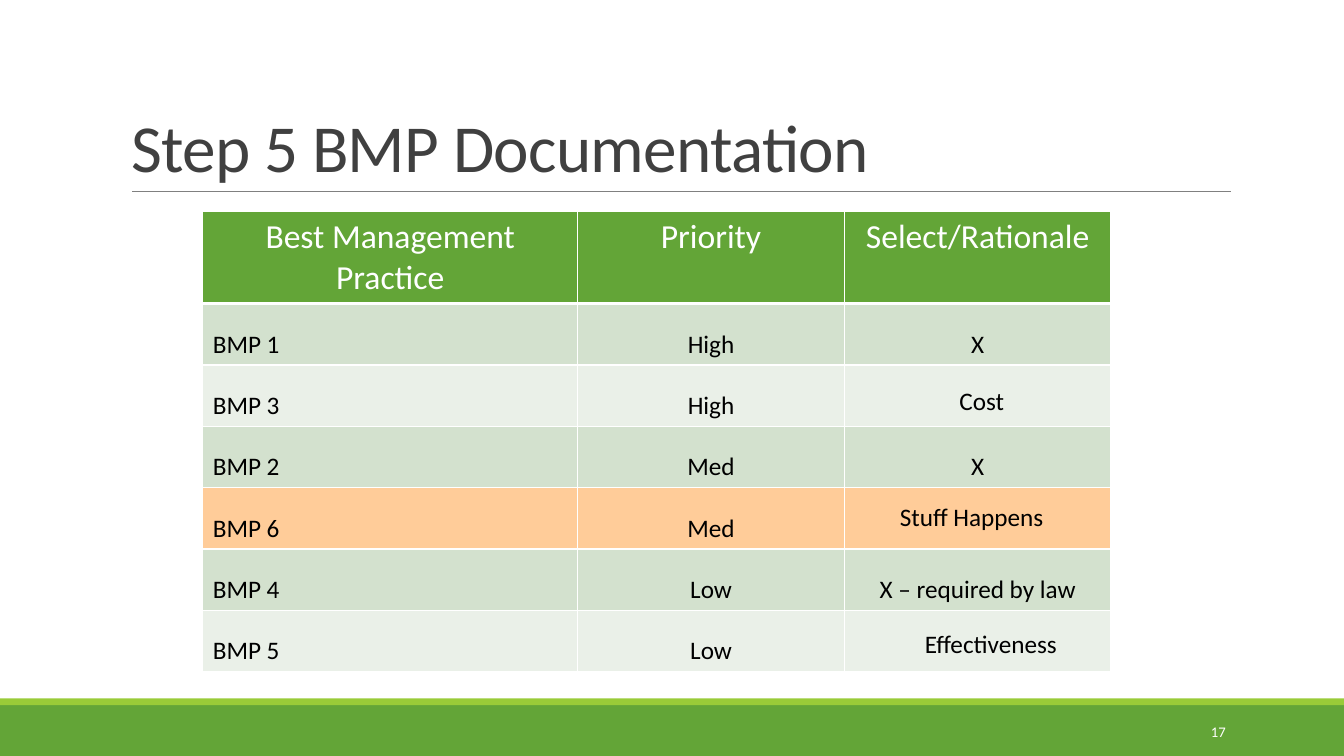
from lxml import etree
from pptx import Presentation
from pptx.dml.color import RGBColor
from pptx.enum.shapes import MSO_CONNECTOR, MSO_SHAPE
from pptx.enum.text import MSO_ANCHOR, MSO_AUTO_SIZE, PP_ALIGN
from pptx.oxml.ns import qn
from pptx.util import Cm, Pt

LEFT, CENTER, RIGHT = PP_ALIGN.LEFT, PP_ALIGN.CENTER, PP_ALIGN.RIGHT
TOP, MIDDLE, BOTTOM = MSO_ANCHOR.TOP, MSO_ANCHOR.MIDDLE, MSO_ANCHOR.BOTTOM
NO_AUTOFIT = MSO_AUTO_SIZE.NONE
RECTANGLE, STRAIGHT = MSO_SHAPE.RECTANGLE, MSO_CONNECTOR.STRAIGHT

WHITE, BLACK, GREEN, LIME = "FFFFFF", "000000", "63A537", "99CB38"
BAND_DARK, BAND_LIGHT, HIGHLIGHT = "D3E1CE", "EAF0E8", "FFCC99"

HEADINGS = ["Best Management Practice", "Priority", "Select/Rationale"]
PRACTICES = [
    ("BMP 1", "High", "X"),
    ("BMP 3", "High", ""),
    ("BMP 2", "Med", "X"),
    ("BMP 6", "Med", ""),
    ("BMP 4", "Low", "X – required by law"),
    ("BMP 5", "Low", ""),
]
HIGHLIGHTED = "BMP 6"
RATIONALES = [
    ("Cost", (23.93, 9.58, 2.34, 1.07)),
    ("Effectiveness", (23.06, 15.7, 4.01, 1.02)),
    ("Stuff Happens", (22.43, 12.52, 4.65, 1.02)),
]


def color(value):
    return RGBColor.from_string(value)


def write(frame, text, size=18, ink=BLACK, align=LEFT, spacing=None):
    paragraph = frame.paragraphs[0]
    paragraph.alignment = align
    if spacing:
        paragraph.line_spacing = spacing
    run = paragraph.add_run()
    run.text = text
    run.font.name = "Calibri"
    run.font.size = Pt(size)
    run.font.color.rgb = color(ink)
    return run


def add_label(slide, box, text, anchor=TOP, **style):
    frame = slide.shapes.add_textbox(*map(Cm, box)).text_frame
    frame.word_wrap = True
    frame.vertical_anchor = anchor
    write(frame, text, **style)


def add_band(slide, box, fill):
    band = slide.shapes.add_shape(RECTANGLE, *map(Cm, box))
    band.shadow.inherit = False
    band.fill.solid()
    band.fill.fore_color.rgb = color(fill)
    band.line.fill.background()


def add_footer(slide, box):
    left, top, width, height = box
    stripe = 0.17
    add_band(slide, (left, top + stripe, width, height - stripe), GREEN)
    add_band(slide, (left, top, width, stripe), LIME)
    add_label(slide, (left + 27.51, top + 0.33, 3.63, 1.02), "17",
              anchor=MIDDLE, size=10.5, ink=WHITE, align=RIGHT)


def add_heading(slide, box):
    left, top, width, height = box
    title = slide.shapes.title
    title.left, title.top, title.width, title.height = map(Cm, box)
    title.text_frame.auto_size = NO_AUTOFIT
    title.text_frame.vertical_anchor = BOTTOM
    run = write(title.text_frame, "Step 5 BMP Documentation", size=48,
                ink="404040", spacing=0.85)
    run.font._element.set("spc", "-50")

    base = Cm(top + height)
    rule = slide.shapes.add_connector(
        STRAIGHT, Cm(left + 0.28), base, Cm(left + width + 0.02), base)
    rule.line.color.rgb = color("808080")
    rule.line.width = Pt(0.5)
    etree.SubElement(rule._element.spPr, qn("a:effectLst"))


def add_borders(cell, bottom):
    properties = cell._tc.get_or_add_tcPr()
    for place, (side, points) in enumerate(
            [("L", 1), ("R", 1), ("T", 1), ("B", bottom)]):
        edge = etree.Element(qn("a:ln" + side), w=str(Pt(points)))
        fill = etree.SubElement(edge, qn("a:solidFill"))
        etree.SubElement(fill, qn("a:srgbClr"), val=WHITE)
        properties.insert(place, edge)


def fill_cell(cell, text, fill, anchor=BOTTOM, bottom=1, **style):
    cell.fill.solid()
    cell.fill.fore_color.rgb = color(fill)
    cell.vertical_anchor = anchor
    add_borders(cell, bottom)
    if text:
        write(cell.text_frame, text, **style)


def add_practices(slide, box):
    left, top, width, height = box
    header_height, priority_width = 2.32, 6.72
    row_height = (height - header_height) / len(PRACTICES)
    table = slide.shapes.add_table(
        len(PRACTICES) + 1, len(HEADINGS), *map(Cm, box)).table
    widths = [width - 2 * priority_width, priority_width, priority_width]
    for column, column_width in zip(table.columns, widths):
        column.width = Cm(column_width)
    for index, row in enumerate(table.rows):
        row.height = Cm(row_height if index else header_height)

    for column, heading in enumerate(HEADINGS):
        fill_cell(table.cell(0, column), heading, GREEN, anchor=TOP, bottom=3,
                  size=24, ink=WHITE, align=CENTER)
    for row, practice in enumerate(PRACTICES, 1):
        fill = BAND_DARK if row % 2 else BAND_LIGHT
        if practice[0] == HIGHLIGHTED:
            fill = HIGHLIGHT
        for column, text in enumerate(practice):
            fill_cell(table.cell(row, column), text, fill,
                      align=CENTER if column else LEFT)

    for text, label_box in RATIONALES:
        add_label(slide, label_box, text)


def main():
    deck = Presentation()
    deck.slide_width, deck.slide_height = Cm(33.87), Cm(19.05)
    slide = deck.slides.add_slide(deck.slide_layouts[5])
    add_footer(slide, (0, 17.6, 33.87, 1.45))
    add_heading(slide, (3.05, 0.79, 27.94, 4.04))
    add_practices(slide, (5.11, 5.33, 22.89, 11.6))
    deck.save("out.pptx")


if __name__ == "__main__":
    main()
